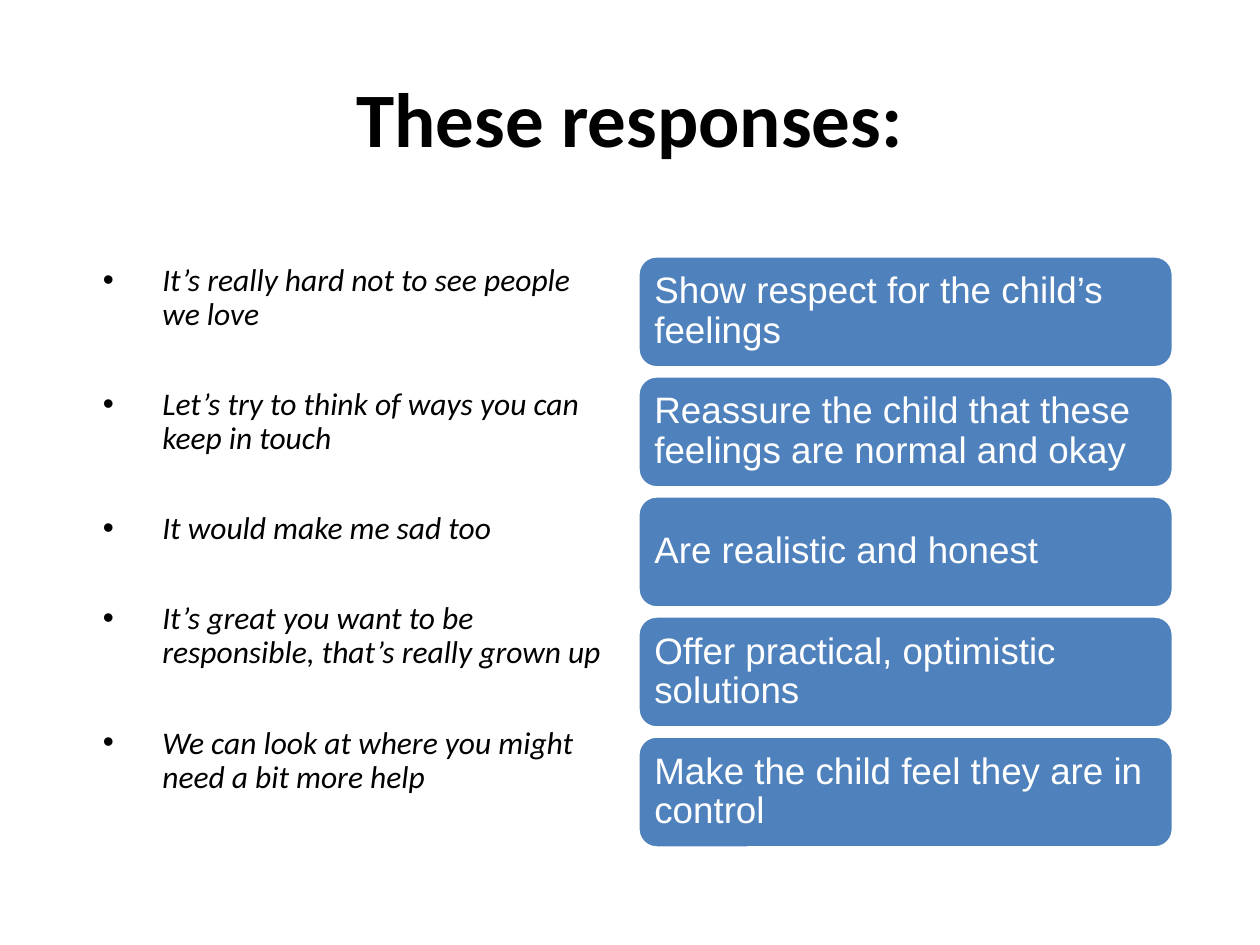
from dataclasses import dataclass

from lxml import etree
from pptx import Presentation
from pptx.dml.color import RGBColor
from pptx.enum.shapes import MSO_SHAPE
from pptx.enum.text import MSO_ANCHOR, PP_ALIGN
from pptx.oxml.ns import qn
from pptx.util import Pt

ROUNDED = MSO_SHAPE.ROUNDED_RECTANGLE
TOP, MIDDLE = MSO_ANCHOR.TOP, MSO_ANCHOR.MIDDLE
LEFT, CENTER = PP_ALIGN.LEFT, PP_ALIGN.CENTER


@dataclass(frozen=True)
class Theme:
    ink: RGBColor = RGBColor(0x00, 0x00, 0x00)
    paper: RGBColor = RGBColor(0xFF, 0xFF, 0xFF)
    accent: RGBColor = RGBColor(0x4F, 0x81, 0xBD)
    text_face: str = "Calibri"
    card_face: str = "Arial"
    title_size: int = 44
    quote_size: int = 18
    card_size: float = 21


class SlideBuilder:
    """Draws the slide's elements in one theme."""

    def __init__(self, slide, theme):
        self.slide = slide
        self.theme = theme

    def frame(self, shape, anchor, inset):
        frame = shape.text_frame
        frame.word_wrap = True
        frame.vertical_anchor = anchor
        frame.margin_left = frame.margin_right = Pt(inset)
        frame.margin_top = frame.margin_bottom = Pt(inset)
        return frame

    def set_text(self, paragraph, text, face, size, color, align=LEFT):
        paragraph.text = text
        paragraph.alignment = align
        paragraph.font.name = face
        paragraph.font.size = Pt(size)
        paragraph.font.color.rgb = color

    def text_box(self, left, top, width, height, anchor):
        box = self.slide.shapes.add_textbox(Pt(left), Pt(top), Pt(width), Pt(height))
        return self.frame(box, anchor, 7.2)

    def title(self, text, left, top, width, height):
        heading = self.text_box(left, top, width, height, MIDDLE).paragraphs[0]
        self.set_text(heading, text, self.theme.text_face, self.theme.title_size,
                      self.theme.ink, CENTER)
        heading.font.bold = True

    def bullets(self, texts, left, top, width, height, gap):
        frame = self.text_box(left, top, width, height, TOP)
        for index, text in enumerate(texts):
            quote = frame.add_paragraph() if index else frame.paragraphs[0]
            self.set_text(quote, text, self.theme.text_face, self.theme.quote_size,
                          self.theme.ink)
            quote.font.italic = True
            quote.line_spacing = 0.9
            quote.space_before = Pt(gap if index else 0)
            properties = quote._p.get_or_add_pPr()
            properties.set("marL", str(Pt(36)))
            properties.set("indent", str(Pt(-34)))
            bullet_font = etree.Element(qn("a:buFont"), typeface="Arial")
            bullet = etree.Element(qn("a:buChar"), char="•")
            default_font = properties.find(qn("a:defRPr"))
            default_font.addprevious(bullet_font)
            default_font.addprevious(bullet)

    def card(self, text, left, top, width, height):
        card = self.slide.shapes.add_shape(ROUNDED, Pt(left), Pt(top), Pt(width), Pt(height))
        card.shadow.inherit = False
        card.fill.solid()
        card.fill.fore_color.rgb = self.theme.accent
        card.line.color.rgb = self.theme.paper
        card.line.width = Pt(2)
        label = self.frame(card, MIDDLE, 6.3).paragraphs[0]
        self.set_text(label, text, self.theme.card_face, self.theme.card_size,
                      self.theme.paper)
        label.line_spacing = 0.9


QUOTES = [
    "It’s really hard not to see people we love",
    "Let’s try to think of ways you can keep in touch",
    "It would make me sad too",
    "It’s great you want to be responsible, that’s really grown up",
    "We can look at where you might need a bit more help",
]
QUALITIES = [
    "Show respect for the child’s feelings",
    "Reassure the child that these feelings are normal and okay",
    "Are realistic and honest",
    "Offer practical, optimistic solutions",
    "Make the child feel they are in control",
]


def main():
    deck = Presentation()
    deck.slide_width, deck.slide_height = Pt(720), Pt(540)
    builder = SlideBuilder(deck.slides.add_slide(deck.slide_layouts[6]), Theme())
    builder.title("These responses:", 36, 21.6, 648, 90)
    builder.bullets(QUOTES, 49.7, 144, 306, 343, gap=32)
    card_top, card_pitch = 146.2, 68.6
    for row, quality in enumerate(QUALITIES):
        builder.card(quality, 364.5, card_top + row * card_pitch, 306, 64)
    deck.save("out.pptx")


if __name__ == "__main__":
    main()
